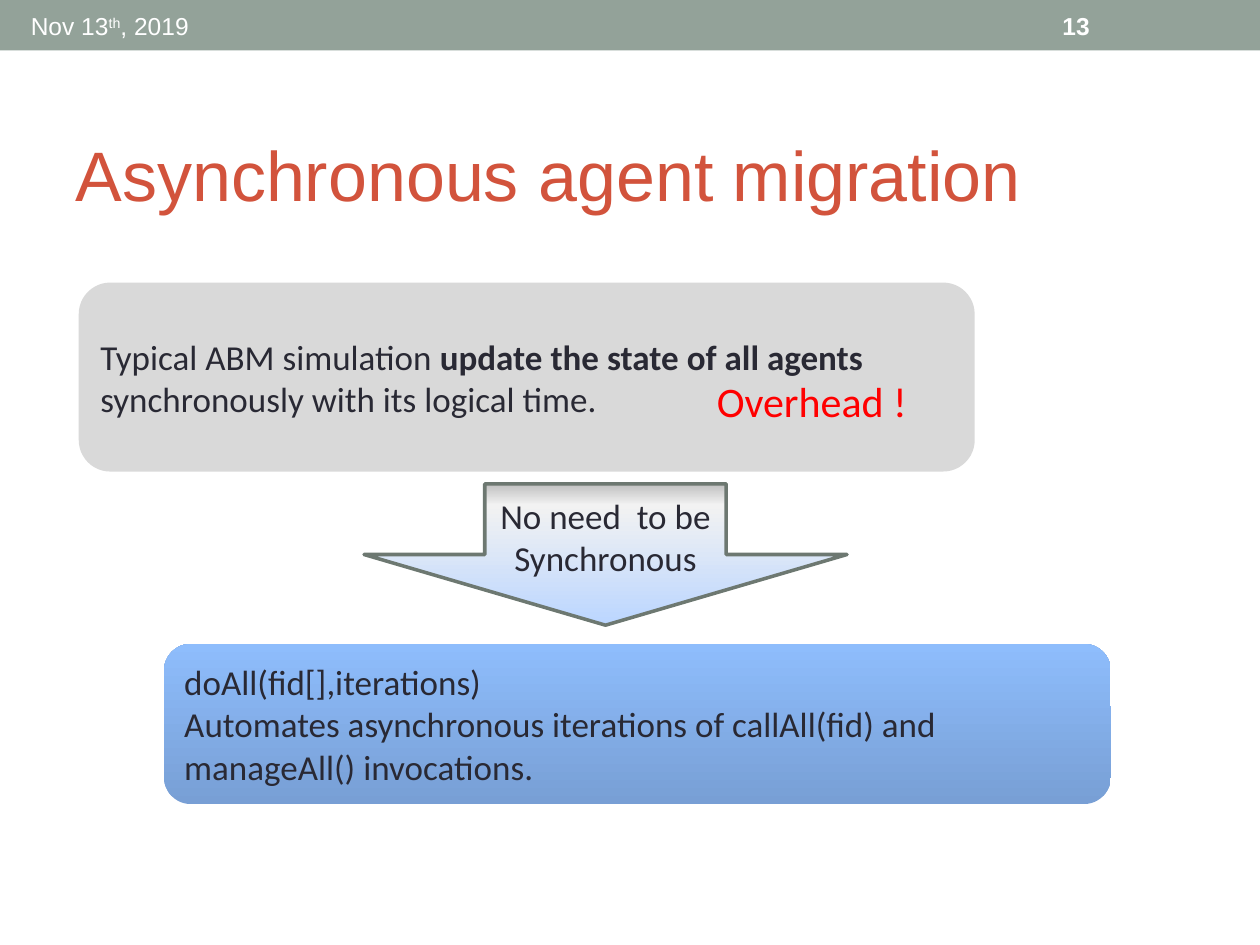
from lxml import etree
from pptx import Presentation
from pptx.dml.color import RGBColor
from pptx.enum.shapes import MSO_SHAPE as SHAPE
from pptx.enum.text import MSO_ANCHOR as ANCHOR, MSO_AUTO_SIZE as AUTO, PP_ALIGN as ALIGN
from pptx.oxml.ns import qn
from pptx.util import Pt

WHITE = RGBColor(0xFF, 0xFF, 0xFF)
RED = RGBColor(0xFF, 0x00, 0x00)
RUST = RGBColor(0xD2, 0x53, 0x3C)
INK = RGBColor(0x29, 0x29, 0x34)
SAGE = RGBColor(0x93, 0xA2, 0x99)
OUTLINE = RGBColor(0x6D, 0x78, 0x71)
LIGHT_GRAY = RGBColor(0xD9, 0xD9, 0xD9)
# Gradient stops run from bottom to top: (percent, colour)
BLUE_STOPS = [(0, RGBColor(0x78, 0x9F, 0xD5)), (100, RGBColor(0x8E, 0xBD, 0xFC))]
ARROW_STOPS = [(0, RGBColor(0xBB, 0xD6, 0xFF)), (85, RGBColor(0xF2, 0xF2, 0xF2)),
               (100, RGBColor(0xBF, 0xBF, 0xBF))]


class SlideBuilder:
    heading_font = "Arial"
    body_font = "Calibri"
    body_size = 20

    def __init__(self, slide):
        self.slide = slide

    def place(self, sp, box):
        sp.left, sp.top, sp.width, sp.height = (Pt(v) for v in box)

    def add_text(self, tf, paragraphs, font, size, color, align=ALIGN.LEFT):
        """Each paragraph is a list of (text, style) runs."""
        for i, runs in enumerate(paragraphs):
            p = tf.paragraphs[0] if i == 0 else tf.add_paragraph()
            p.alignment = align
            p.font.name, p.font.size = font, Pt(size)
            p.font.color.rgb = color
            for text, style in runs:
                r = p.add_run()
                r.text = text
                if style == "bold":
                    r.font.bold = True
                elif style == "super":
                    r._r.get_or_add_rPr().set("baseline", "30000")

    def title(self, text, box):
        sp = self.slide.shapes.title
        self.place(sp, box)
        tf = sp.text_frame
        tf.auto_size = AUTO.NONE
        tf.vertical_anchor = ANCHOR.MIDDLE
        self.add_text(tf, [[(text, None)]], self.heading_font, 40, RUST)
        p = tf.paragraphs[0]
        p.line_spacing, p.space_before = 1.5, Pt(3.6)

    def label(self, runs, box, font, size, color, anchor=ANCHOR.TOP, wrap=True):
        sp = self.slide.shapes.add_textbox(*(Pt(v) for v in box))
        tf = sp.text_frame
        tf.word_wrap, tf.vertical_anchor = wrap, anchor
        self.add_text(tf, [runs], font, size, color)

    def gradient(self, fill, stops):
        fill.gradient()
        fill.gradient_angle = 90
        gs_list = fill._fill._gradFill.find(qn("a:gsLst"))
        for gs in list(gs_list):
            gs_list.remove(gs)
        for percent, color in stops:
            gs = etree.SubElement(gs_list, qn("a:gs"), pos=str(percent * 1000))
            etree.SubElement(gs, qn("a:srgbClr"), val=str(color))

    def shape(self, kind, box, fill, paragraphs=(), align=ALIGN.LEFT, line=None, inset=7.2):
        sp = self.slide.shapes.add_shape(kind, *(Pt(v) for v in box))
        sp.shadow.inherit = False
        if isinstance(fill, list):
            self.gradient(sp.fill, fill)
        else:
            sp.fill.solid()
            sp.fill.fore_color.rgb = fill
        if line:
            sp.line.color.rgb, sp.line.width = line, Pt(2)
        else:
            sp.line.fill.background()
        tf = sp.text_frame
        tf.word_wrap, tf.vertical_anchor = True, ANCHOR.MIDDLE
        tf.margin_top = tf.margin_bottom = Pt(inset)
        self.add_text(tf, paragraphs, self.body_font, self.body_size, INK, align)


def main():
    prs = Presentation()
    prs.slide_width, prs.slide_height = Pt(720), Pt(540)
    s = SlideBuilder(prs.slides.add_slide(prs.slide_layouts[5]))

    # Header band with page number and date
    s.shape(SHAPE.RECTANGLE, (0, 0, 720, 28.8), SAGE)
    s.label([("13", "bold")], (600, 1.5, 84, 26), s.heading_font, 14, WHITE, ANCHOR.MIDDLE)
    s.label([("Nov 13", None), ("th", "super"), (", 2019", None)],
            (10.5, 3, 106.5, 24.2), s.heading_font, 14, WHITE, wrap=False)

    s.title("Asynchronous agent migration", (36, 48, 648, 78))

    # Synchronous simulation and its drawback
    s.shape(SHAPE.ROUNDED_RECTANGLE, (45, 161.5, 512, 108), LIGHT_GRAY,
            [[("Typical ABM simulation ", None), ("update the state of all agents ", "bold"),
              ("synchronously with its logical time.", None)]])
    s.label([("Overhead !", None)], (402.5, 211, 140.5, 36), s.body_font, 24, RED)

    # Asynchronous alternative
    s.shape(SHAPE.ROUNDED_RECTANGLE, (93.75, 368, 541, 91.5), BLUE_STOPS,
            [[("doAll(ﬁd[],iterations)", None)],
             [("Automates asynchronous iterations of callAll(ﬁd) and "
               "manageAll() invocations.", None)]])
    s.shape(SHAPE.DOWN_ARROW, (208, 276.5, 276, 80.75), ARROW_STOPS,
            [[("No need  to be Synchronous", None)]], ALIGN.CENTER, OUTLINE, 3.6)

    prs.save("out.pptx")


if __name__ == "__main__":
    main()
